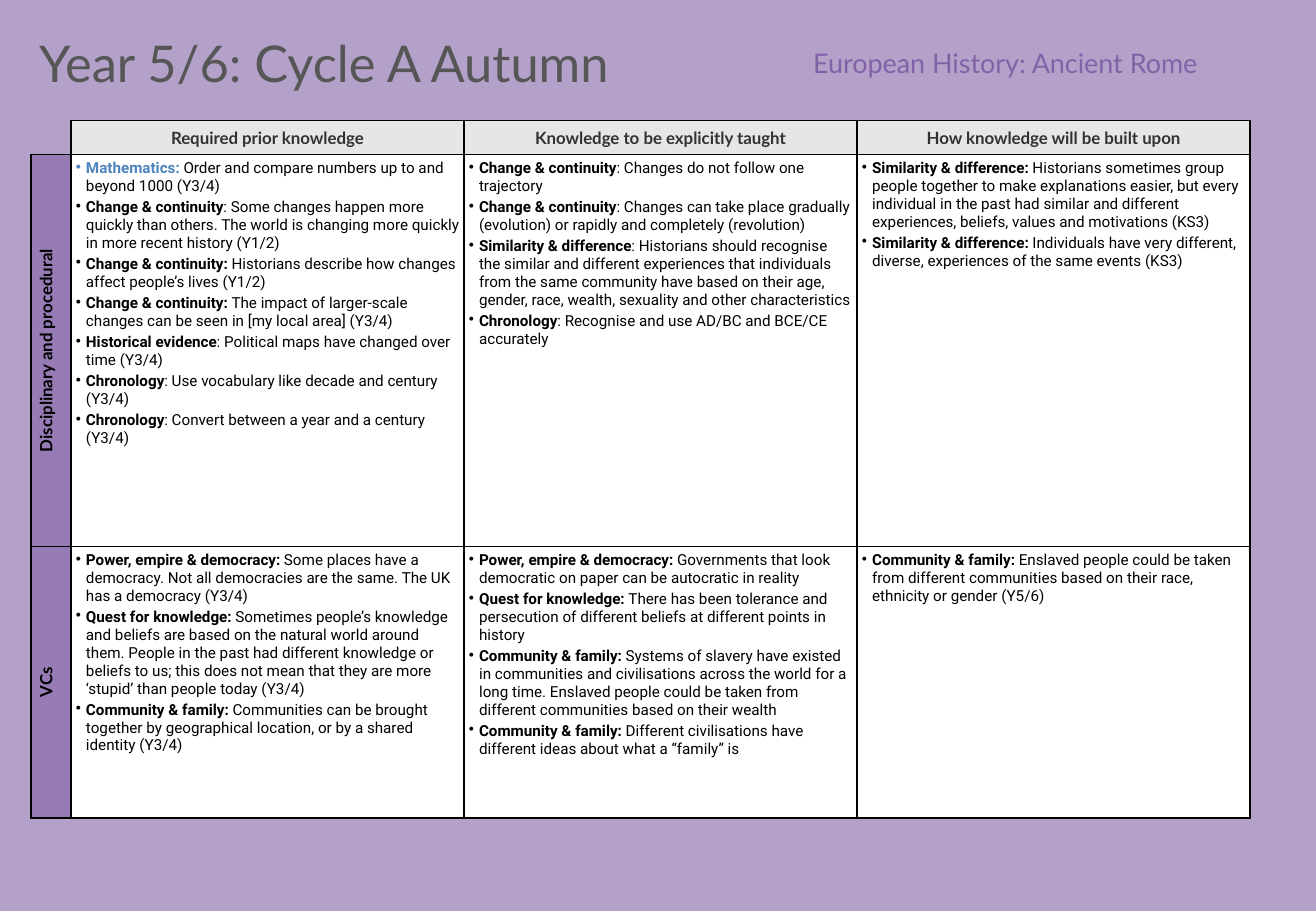
"""Build a history knowledge table for Year 5/6, Cycle A Autumn."""
from lxml.etree import SubElement
from pptx import Presentation
from pptx.dml.color import RGBColor
from pptx.enum.text import MSO_ANCHOR as Anchor, MSO_AUTO_SIZE as Fit, PP_ALIGN as Align
from pptx.oxml.ns import qn
from pptx.util import Pt

HUES = {"back": "B4A1CA", "title": "565656", "plum": "8262A6", "head": "323232",
        "grey": "E6E6E6", "blue": "4E83BE", "black": "000000", "white": "FFFFFF"}

TITLE = "Year 5/6: Cycle A Autumn"
TOPIC = "European History: Ancient Rome"
HEADS = ["Required prior knowledge", "Knowledge to be explicitly taught",
         "How knowledge will be built upon"]
ROWS = [
    ("Disciplinary and procedural", [
        [("Mathematics: ", "Order and compare numbers up to and beyond 1000 (Y3/4)"),
         ("Change & continuity", ": Some changes happen more quickly than others. "
          "The world is changing more quickly in more recent history (Y1/2)"),
         ("Change & continuity: ",
          "Historians describe how changes affect people’s lives (Y1/2)"),
         ("Change & continuity: ",
          "The impact of larger-scale changes can be seen in [my local area] (Y3/4)"),
         ("Historical evidence", ": Political maps have changed over time (Y3/4)"),
         ("Chronology", ": Use vocabulary like decade and century (Y3/4)"),
         ("Chronology", ": Convert between a year and a century (Y3/4)")],
        [("Change & continuity", ": Changes do not follow one trajectory"),
         ("Change & continuity", ": Changes can take place gradually (evolution) "
          "or rapidly and completely (revolution)"),
         ("Similarity & difference", ": Historians should recognise the similar and "
          "different experiences that individuals from the same community have based "
          "on their age, gender, race, wealth, sexuality and other characteristics"),
         ("Chronology", ": Recognise and use AD/BC and BCE/CE accurately")],
        [("Similarity & difference: ", "Historians sometimes group people together to "
          "make explanations easier, but every individual in the past had similar and "
          "different experiences, beliefs, values and motivations (KS3)"),
         ("Similarity & difference: ", "Individuals have very different, diverse, "
          "experiences of the same events (KS3)")]]),
    ("VCs", [
        [("Power, empire & democracy: ", "Some places have a democracy. "
          "Not all democracies are the same. The UK has a democracy (Y3/4)"),
         ("Quest for knowledge: ", "Sometimes people’s knowledge and beliefs are based "
          "on the natural world around them. People in the past had different knowledge "
          "or beliefs to us; this does not mean that they are more ‘stupid’ than people "
          "today (Y3/4)"),
         ("Community & family: ", "Communities can be brought together by geographical "
          "location, or by a shared identity (Y3/4)")],
        [("Power, empire & democracy: ",
          "Governments that look democratic on paper can be autocratic in reality"),
         ("Quest for knowledge: ", "There has been tolerance and persecution of "
          "different beliefs at different points in history"),
         ("Community & family: ", "Systems of slavery have existed in communities and "
          "civilisations across the world for a long time. Enslaved people could be "
          "taken from different communities based on their wealth"),
         ("Community & family: ",
          "Different civilisations have different ideas about what a “family” is")],
        [("Community & family: ", "Enslaved people could be taken from different "
          "communities based on their race, ethnicity or gender (Y5/6)")]]),
]
WIDTHS = [23.75] + [233] * 3
HEIGHTS = [20.15, 232.4, 160.8]
FRAME = {"word_wrap": True, "auto_size": Fit.NONE, "vertical_anchor": Anchor.MIDDLE}
INSETS = {"margin_" + side: Pt(3) for side in ("left", "right", "top", "bottom")}


def assign(item, values):
    for name, value in values.items():
        setattr(item, name, value)


def write(para, text, hue, size, face="Lato", bold=False):
    run = para.add_run()
    run.text = text
    assign(run.font, {"name": face, "size": Pt(size), "bold": bold})
    run.font.color.rgb = RGBColor.from_string(HUES[hue])


def banner(shape, box, text, hue, size, align):
    assign(shape, dict(zip(("left", "top", "width", "height"), map(Pt, box))))
    assign(shape.text_frame, FRAME)
    para = shape.text_frame.paragraphs[0]
    para.alignment = align
    write(para, text, hue, size)


def border(cell, sides):
    props = cell._tc.get_or_add_tcPr()
    for side in "LRTB":
        line = SubElement(props, qn("a:ln" + side), w=str(Pt(1)))
        if side in sides:
            fill = SubElement(line, qn("a:solidFill"))
            SubElement(fill, qn("a:srgbClr"), val=HUES["black"])
        else:
            SubElement(line, qn("a:noFill"))


def paint(cell, hue, alpha=None):
    border(cell, "LRTB")
    assign(cell, INSETS)
    cell.fill.solid()
    cell.fill.fore_color.rgb = RGBColor.from_string(HUES[hue])
    if alpha:
        tint = cell._tc.tcPr.find(".//" + qn("a:solidFill") + "[last()]/" + qn("a:srgbClr"))
        for tint in cell._tc.tcPr.findall(qn("a:solidFill") + "/" + qn("a:srgbClr")):
            SubElement(tint, qn("a:alpha"), val=str(alpha * 1000))


def label(cell, text, hue):
    cell.vertical_anchor = Anchor.MIDDLE
    para = cell.text_frame.paragraphs[0]
    para.alignment = Align.CENTER
    write(para, text, hue, 10, bold=True)


def listing(cell, items):
    frame = cell.text_frame
    for i, (term, text) in enumerate(items):
        para = frame.add_paragraph() if i else frame.paragraphs[0]
        props = para._p.get_or_add_pPr()
        assign(para, {"space_after": Pt(2)})
        props.set("marL", str(Pt(6)))
        props.set("indent", str(-Pt(6)))
        SubElement(props, qn("a:buChar"), char="•")
        hue = "blue" if term.startswith("Mathematics") else "black"
        write(para, term, hue, 9, "Roboto", True)
        write(para, text, "black", 9, "Roboto")


def main():
    deck = Presentation()
    assign(deck, {"slide_width": Pt(780), "slide_height": Pt(540)})
    slide = deck.slides.add_slide(deck.slide_layouts[5])
    slide.background.fill.solid()
    slide.background.fill.fore_color.rgb = RGBColor.from_string(HUES["back"])

    banner(slide.shapes.title, (16, 19, 606, 36), TITLE, "title", 30, Align.LEFT)
    topic = slide.shapes.add_textbox(0, 0, 0, 0)
    banner(topic, (356.5, 19, 360.5, 36), TOPIC, "plum", 16, Align.RIGHT)

    size = map(Pt, (18.25, 71.5, sum(WIDTHS), sum(HEIGHTS)))
    table = slide.shapes.add_table(len(HEIGHTS), len(WIDTHS), *size).table
    assign(table, {"first_row": False, "horz_banding": False})
    for col, width in zip(table.columns, WIDTHS):
        col.width = Pt(width)
    for row, height in zip(table.rows, HEIGHTS):
        row.height = Pt(height)

    corner = table.cell(0, 0)
    border(corner, "RB")
    assign(corner, INSETS)
    corner.fill.background()
    SubElement(corner.text_frame.paragraphs[0]._p, qn("a:endParaRPr"), sz="1000")

    for c, head in enumerate(HEADS, 1):
        paint(table.cell(0, c), "grey")
        label(table.cell(0, c), head, "head")
    for r, (name, lists) in enumerate(ROWS, 1):
        side = table.cell(r, 0)
        paint(side, "plum", 60)
        side._tc.tcPr.set("vert", "vert270")
        label(side, name, "black")
        for c, items in enumerate(lists, 1):
            paint(table.cell(r, c), "white")
            listing(table.cell(r, c), items)
    deck.save("out.pptx")


if __name__ == "__main__":
    main()
